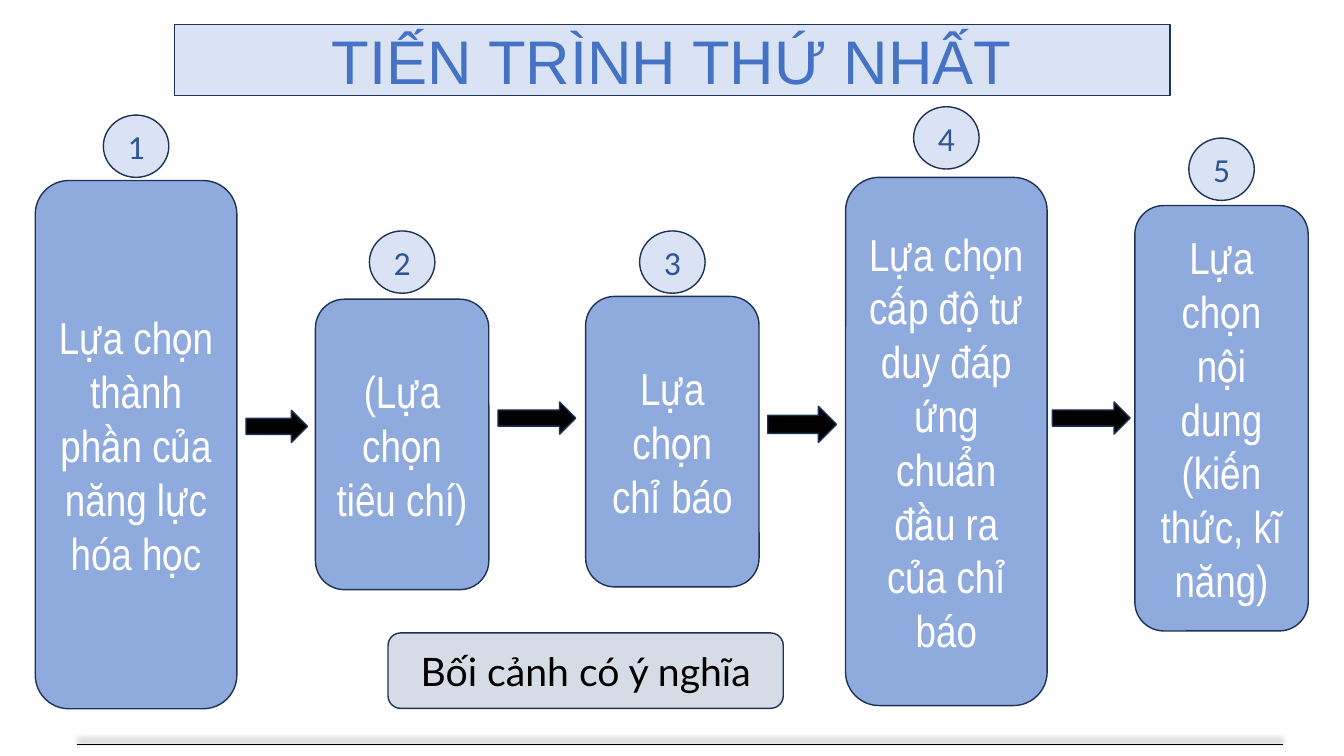
from lxml import etree
from pptx import Presentation
from pptx import util as u
from pptx.dml.color import RGBColor
from pptx.enum import shapes, text
from pptx.oxml.ns import qn

COLORS = {
    "pale": "DAE3F3", "box": "8FAADC", "outline": "1E3256", "title": "4472C4",
    "number": "2F5597", "note": "D6DCE5", "black": "000000", "white": "FFFFFF",
}
SHAPE = shapes.MSO_SHAPE
CIRCLE_W, CIRCLE_H = 1.65, 1.57

STEPS = [
    ("Lựa chọn thành phần của năng lực hóa học", 0.89, 4.55, 5.08, 13.31, 2.9),
    ("(Lựa chọn tiêu chí)", 7.95, 7.54, 4.37, 7.32, 5.82),
    ("Lựa chọn chỉ báo", 14.76, 7.47, 4.37, 7.32, 5.82),
    ("Lựa chọn cấp độ tư duy đáp ứng chuẩn đầu ra của chỉ báo",
     21.31, 4.47, 5.08, 13.31, 2.69),
    ("Lựa chọn nội dung (kiến thức, kĩ năng)", 28.6, 5.18, 4.37, 10.72, 3.48),
]
ARROWS = [
    (6.2, 10.34, 1.55, 0.81),
    (12.55, 10.13, 1.96, 0.81),
    (19.35, 10.24, 1.73, 0.91),
    (26.52, 10.13, 1.96, 0.81),
]


def rgb(name):
    return RGBColor.from_string(COLORS[name])


class ProcessSlide:
    def __init__(self, prs):
        self.slide = prs.slides.add_slide(prs.slide_layouts[5])

    def paint(self, sp, fill):
        sp.fill.solid()
        sp.fill.fore_color.rgb = rgb(fill)
        sp.line.color.rgb = rgb("outline")
        sp.line.width = u.Pt(1)

    def label(self, sp, words, font, size, color):
        tf = sp.text_frame
        tf.text = words
        tf.word_wrap = True
        tf.auto_size = text.MSO_AUTO_SIZE.NONE
        tf.vertical_anchor = text.MSO_ANCHOR.MIDDLE
        p = tf.paragraphs[0]
        p.alignment = text.PP_ALIGN.CENTER
        r = p.runs[0]
        r.font.name = font
        r.font.size = u.Pt(size)
        r.font.color.rgb = rgb(color)

    def title(self, words, x, y, w, h):
        sp = self.slide.shapes.title
        sp.left, sp.top, sp.width, sp.height = map(u.Cm, (x, y, w, h))
        self.paint(sp, "pale")
        self.label(sp, words, "Arial", 44, "title")

    def shape(self, kind, fill, x, y, w, h):
        sp = self.slide.shapes.add_shape(kind, *map(u.Cm, (x, y, w, h)))
        sp.shadow.inherit = False
        self.paint(sp, fill)
        return sp

    def step(self, number, words, x, y, w, h, circle_y):
        box = self.shape(SHAPE.ROUNDED_RECTANGLE, "box", x, y, w, h)
        self.label(box, words, "Arial Narrow", 32, "white")
        circle_x = x + (w - CIRCLE_W) / 2
        circle = self.shape(SHAPE.OVAL, "pale", circle_x, circle_y, CIRCLE_W, CIRCLE_H)
        self.label(circle, str(number), "Calibri", 24, "number")

    def arrow(self, x, y, w, h):
        self.shape(SHAPE.RIGHT_ARROW, "black", x, y, w, h)

    def note(self, words, x, y, w, h):
        sp = self.shape(SHAPE.ROUNDED_RECTANGLE, "note", x, y, w, h)
        self.label(sp, words, "Lato", 28, "black")

    def footer_line(self, x1, x2, y):
        line = self.slide.shapes.add_connector(
            shapes.MSO_CONNECTOR.STRAIGHT, *map(u.Cm, (x1, y, x2, y)))
        line.line.color.rgb = rgb("black")
        line.line.width = u.Pt(0.5)
        effects = etree.SubElement(line._element.spPr, qn("a:effectLst"))
        shadow = etree.SubElement(
            effects, qn("a:outerShdw"), blurRad=str(u.Pt(4)), dist=str(u.Pt(3)),
            dir=str(270 * 60000), rotWithShape="0")
        color = etree.SubElement(shadow, qn("a:srgbClr"), val=COLORS["black"])
        etree.SubElement(color, qn("a:alpha"), val="40000")


def main():
    prs = Presentation()
    prs.slide_width, prs.slide_height = u.Cm(33.87), u.Cm(19.05)
    s = ProcessSlide(prs)
    s.title("TIẾN TRÌNH THỨ NHẤT", 4.39, 0.61, 25.1, 1.8)
    for number, step in enumerate(STEPS, 1):
        s.step(number, *step)
    for arrow in ARROWS:
        s.arrow(*arrow)
    s.note("Bối cảnh có ý nghĩa", 9.78, 15.95, 9.96, 1.9)
    s.footer_line(1.93, 32.33, 18.75)
    prs.save("out.pptx")


if __name__ == "__main__":
    main()
